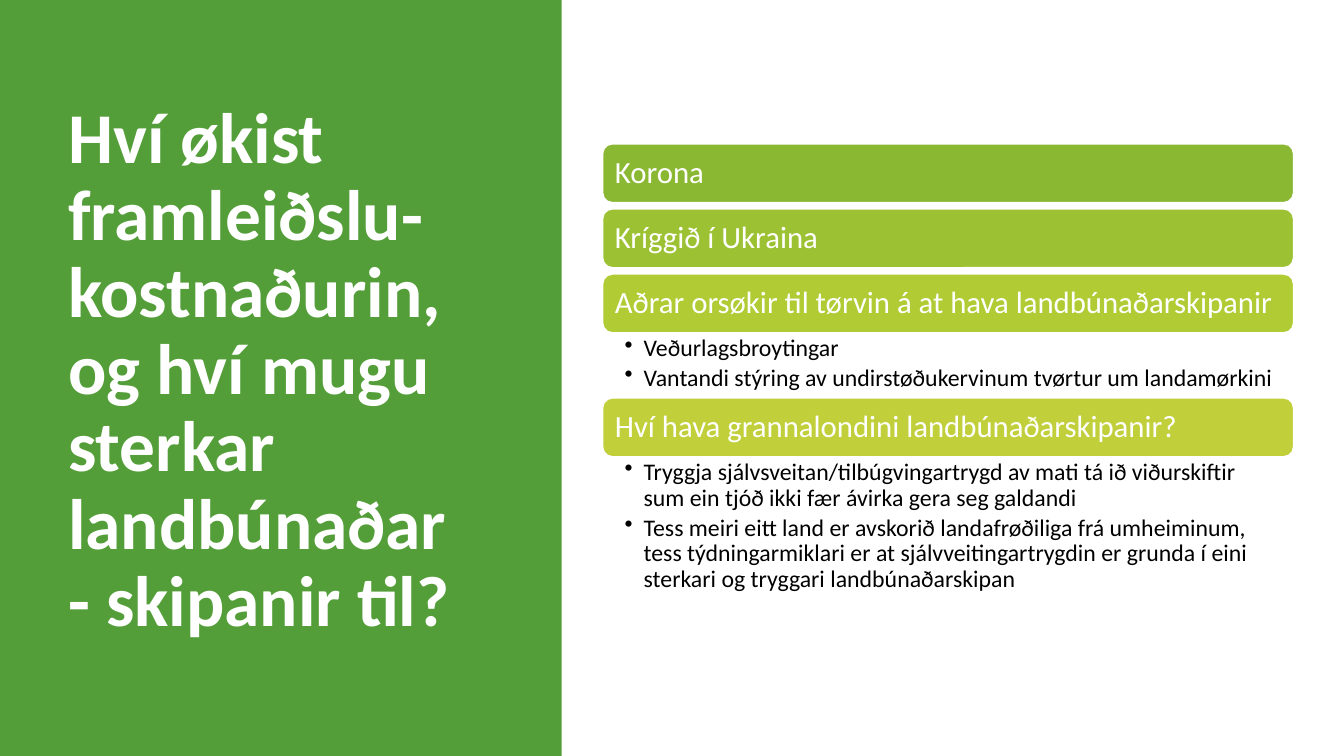
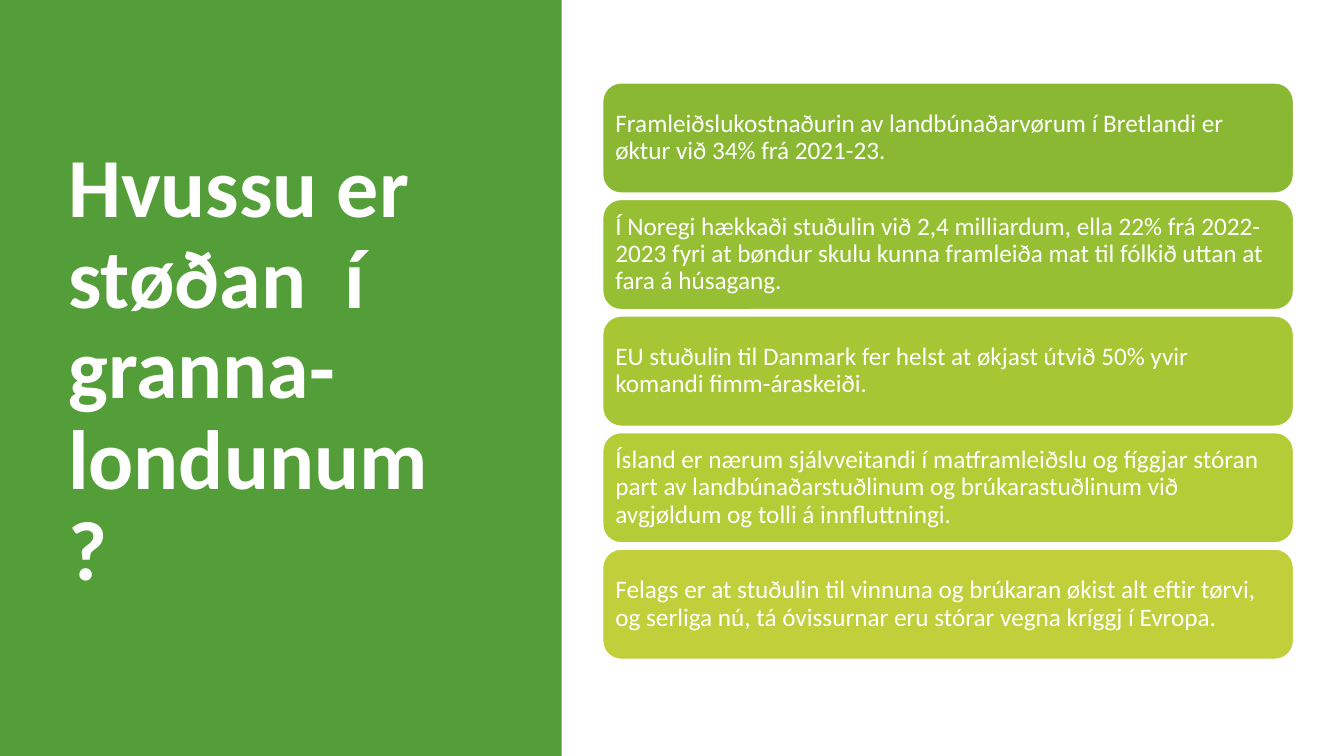
from dataclasses import dataclass
from lxml.etree import SubElement
from pptx import Presentation
from pptx.dml.color import RGBColor as RGB
from pptx.enum.shapes import MSO_SHAPE as Geo
from pptx.enum.text import MSO_ANCHOR as Anchor, PP_ALIGN as Align
from pptx.oxml.ns import qn
from pptx.util import Pt

PX = 9525


@dataclass(frozen=True)
class Theme:
    font: str = "Calibri"
    panel: str = "549E39"
    white: str = "FFFFFF"
    ink: str = "000000"
    four: tuple = ("8AB833", "9CC233", "B0CB34", "C0CF3A")
    five: tuple = ("8AB833", "97BF33", "A6C634", "B4CC35", "C0CF3A")
    head: int = 22
    body: int = 18
    point: int = 17
    tight: float = 0.9


theme = Theme()


def block(slide, geo, box, fill, line=None):
    shape = slide.shapes.add_shape(geo, *[n * PX for n in box])
    shape.shadow.inherit = False
    shape.fill.solid()
    shape.fill.fore_color.rgb = RGB.from_string(fill)
    if line:
        shape.line.color.rgb = RGB.from_string(line)
        shape.line.width = Pt(1)
    else:
        shape.line.fill.background()
    return shape


def write(shape, texts, size, color, pad, bold=False, list_in=0):
    frame = shape.text_frame
    frame.word_wrap = True
    frame.vertical_anchor = Anchor.TOP if list_in else Anchor.MIDDLE
    left, top, right, base = [n * PX for n in pad]
    frame.margin_left, frame.margin_top = left, top
    frame.margin_right, frame.margin_bottom = right, base
    for i, text in enumerate(texts):
        para = frame.add_paragraph() if i else frame.paragraphs[0]
        para.alignment = Align.LEFT
        para.line_spacing = theme.tight
        if list_in:
            para.space_after = Pt(3)
            props = para._p.get_or_add_pPr()
            props.set("marL", str(list_in * PX))
            props.set("indent", str(-list_in * PX))
            SubElement(props, qn("a:buChar")).set("char", "•")
        run = para.add_run()
        run.text = text
        run.font.name = theme.font
        run.font.size = Pt(size)
        run.font.bold = bold
        run.font.color.rgb = RGB.from_string(color)


causes = [
    ("Korona", [], 0),
    ("Kríggið í Ukraina", [], 0),
    ("Aðrar orsøkir til tørvin á at hava landbúnaðarskipanir", [
        "Veðurlagsbroytingar",
        "Vantandi stýring av undirstøðukervinum tvørtur um landamørkini",
    ], 62),
    ("Hví hava grannalondini landbúnaðarskipanir?", [
        "Tryggja sjálvsveitan/tilbúgvingartrygd av mati tá ið viðurskiftir "
        "sum ein tjóð ikki fær ávirka gera seg galdandi",
        "Tess meiri eitt land er avskorið landafrøðiliga frá umheiminum, "
        "tess týdningarmiklari er at sjálvveitingartrygdin er grunda í eini "
        "sterkari og tryggari landbúnaðarskipan",
    ], 136),
]
states = [
    ("Framleiðslukostnaðurin av landbúnaðarvørum í Bretlandi er "
     "øktur við 34% frá 2021-23.", [], 0),
    ("Í Noregi hækkaði stuðulin við 2,4 milliardum, ella 22% frá 2022-2023 "
     "fyri at bøndur skulu kunna framleiða mat til fólkið uttan at "
     "fara á húsagang.", [], 0),
    ("EU stuðulin til Danmark fer helst at økjast útvið 50% yvir "
     "komandi fimm-áraskeiði.", [], 0),
    ("Ísland er nærum sjálvveitandi í matframleiðslu og fíggjar stóran "
     "part av landbúnaðarstuðlinum og brúkarastuðlinum við "
     "avgjøldum og tolli á innfluttningi.", [], 0),
    ("Felags er at stuðulin til vinnuna og brúkaran økist alt eftir tørvi, "
     "og serliga nú, tá óvissurnar eru stórar vegna kríggj í Evropa.", [], 0),
]
pages = [
    ("Hví økist framleiðslu-kostnaðurin, og hví mugu sterkar "
     "landbúnaðar- skipanir til?", 51, causes, theme.four,
     theme.head, 137, 56, 9),
    ("Hvussu er støðan  í granna-londunum?", 60, states, theme.five,
     theme.body, 79, 105, 7),
]

LEFT, WIDE, GAP = 574, 658, 6

deck = Presentation()
deck.slide_width, deck.slide_height = 1280 * PX, 720 * PX

for title, big, cards, fills, size, top, tall, pad in pages:
    slide = deck.slides.add_slide(deck.slide_layouts[6])
    block(slide, Geo.RECTANGLE, (0, 0, 535, 720), theme.panel)
    name = slide.shapes.add_textbox(55 * PX, 65 * PX, 399 * PX, 578 * PX)
    write(name, [title], big, theme.white, (10, 5, 10, 5), bold=True)
    for (text, points, deep), fill in zip(cards, fills):
        card = block(slide, Geo.ROUNDED_RECTANGLE, (LEFT, top, WIDE, tall),
                     fill, theme.white)
        write(card, [text], size, theme.white, [pad] * 4)
        top += tall
        if points:
            notes = slide.shapes.add_textbox(LEFT * PX, top * PX,
                                             WIDE * PX, deep * PX)
            write(notes, points, theme.point, theme.ink, (21, 3, 16, 3),
                  list_in=18)
        top += deep or GAP

deck.save("out.pptx")
